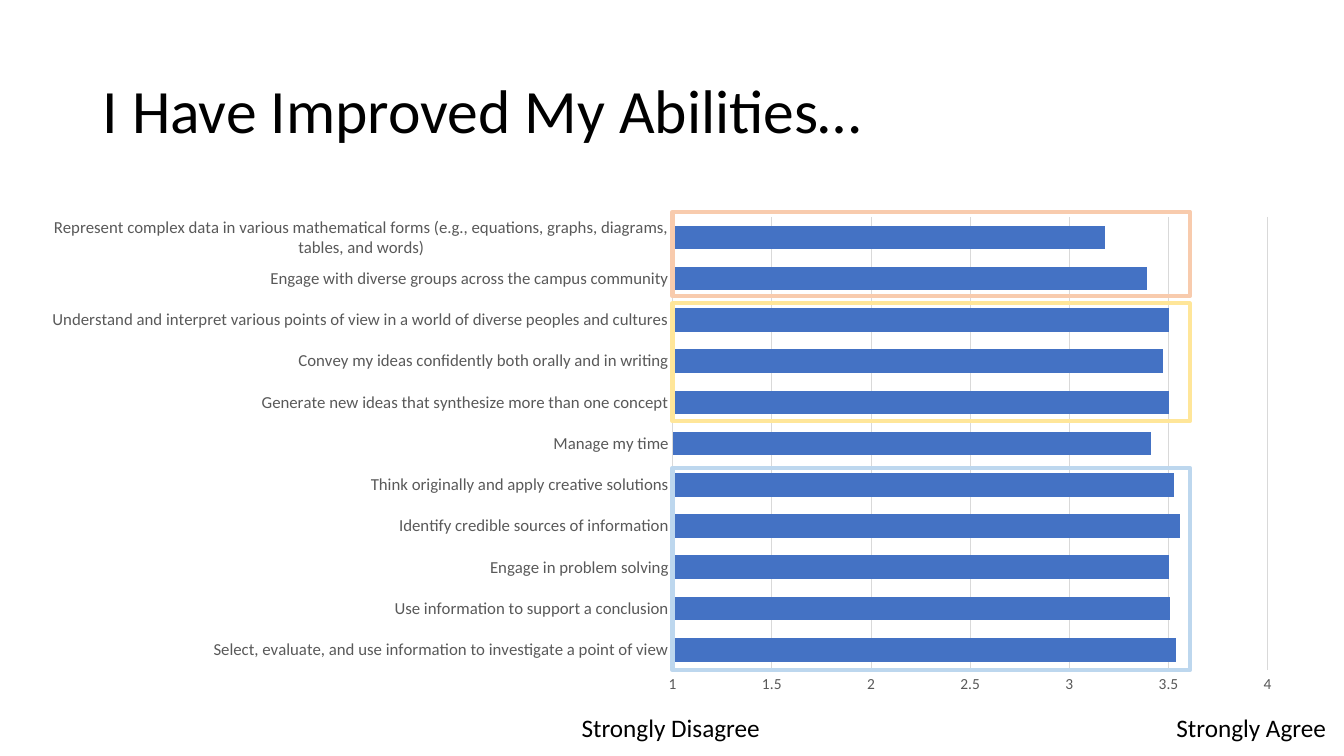
from dataclasses import dataclass

from lxml import etree
from pptx import Presentation
from pptx.chart.data import CategoryChartData
from pptx.dml.color import RGBColor
from pptx.enum.chart import XL_CHART_TYPE, XL_TICK_MARK
from pptx.enum.shapes import MSO_SHAPE
from pptx.enum.text import MSO_ANCHOR
from pptx.util import Inches, Pt

BAR_CLUSTERED = XL_CHART_TYPE.BAR_CLUSTERED
NO_TICK = XL_TICK_MARK.NONE
RECTANGLE = MSO_SHAPE.RECTANGLE
MIDDLE = MSO_ANCHOR.MIDDLE
CHART_NS = "http://schemas.openxmlformats.org/drawingml/2006/chart"

RATINGS = [
    ("Select, evaluate, and use information to investigate a point of view", 3.54),
    ("Use information to support a conclusion", 3.51),
    ("Engage in problem solving", 3.5),
    ("Identify credible sources of information", 3.56),
    ("Think originally and apply creative solutions", 3.53),
    ("Manage my time", 3.41),
    ("Generate new ideas that synthesize more than one concept", 3.5),
    ("Convey my ideas confidently both orally and in writing", 3.47),
    ("Understand and interpret various points of view in a world of diverse peoples and cultures", 3.5),
    ("Engage with diverse groups across the campus community", 3.39),
    ("Represent complex data in various mathematical forms "
     "(e.g., equations, graphs, diagrams, tables, and words)", 3.18),
]


@dataclass(frozen=True)
class Theme:
    font: str = "Calibri"
    text: str = "000000"
    muted: str = "595959"
    grid: str = "D9D9D9"
    bar: str = "4472C4"
    orange: str = "F8CBAD"
    yellow: str = "FFE699"
    blue: str = "BDD7EE"
    title_size: int = 44
    label_size: int = 18
    category_size: int = 12
    value_size: int = 11


class SlideBuilder:
    def __init__(self, page, theme):
        self.page = page
        self.theme = theme

    def style_font(self, font, size, color):
        font.name = self.theme.font
        font.size = Pt(size)
        font.color.rgb = RGBColor.from_string(color)

    def style_line(self, line, color, width):
        line.color.rgb = RGBColor.from_string(color)
        line.width = Pt(width)

    def add_text(self, text, left, top, width, height, size, wrap=False):
        box = self.page.shapes.add_textbox(
            Inches(left), Inches(top), Inches(width), Inches(height))
        frame = box.text_frame
        frame.word_wrap = wrap
        frame.text = text
        para = frame.paragraphs[0]
        self.style_font(para.runs[0].font, size, self.theme.text)
        return box

    def add_title(self, text, left, top, width, height):
        box = self.add_text(text, left, top, width, height, self.theme.title_size, wrap=True)
        box.text_frame.vertical_anchor = MIDDLE
        box.text_frame.paragraphs[0].line_spacing = 0.9

    def add_frame(self, left, top, width, height, color):
        box = self.page.shapes.add_shape(
            RECTANGLE, Inches(left), Inches(top), Inches(width), Inches(height))
        box.shadow.inherit = False
        box.fill.background()
        self.style_line(box.line, color, 3)

    def add_bar_chart(self, ratings, left, top, width, height, plot_area):
        data = CategoryChartData()
        data.categories = [label for label, _ in ratings]
        data.add_series("Series 1", [score for _, score in ratings])
        chart = self.page.shapes.add_chart(
            BAR_CLUSTERED, Inches(left), Inches(top), Inches(width), Inches(height), data).chart
        chart.has_legend = False
        chart.has_title = False
        self.style_font(chart.font, 10, self.theme.text)
        plot = chart.plots[0]
        plot.gap_width = 74
        plot.vary_by_categories = False
        fill = plot.series[0].format.fill
        fill.solid()
        fill.fore_color.rgb = RGBColor.from_string(self.theme.bar)
        self.style_axes(chart)
        self.place_plot(chart, plot_area)

    def style_axes(self, chart):
        theme = self.theme
        categories, values = chart.category_axis, chart.value_axis
        for axis, size in ((categories, theme.category_size), (values, theme.value_size)):
            axis.major_tick_mark = NO_TICK
            axis.minor_tick_mark = NO_TICK
            self.style_font(axis.tick_labels.font, size, theme.muted)
        self.style_line(categories.format.line, theme.grid, 0.75)
        values.format.line.fill.background()
        values.minimum_scale = 1
        values.maximum_scale = 4
        values.major_unit = 0.5
        values.has_major_gridlines = True
        self.style_line(values.major_gridlines.format.line, theme.grid, 0.75)

    def place_plot(self, chart, plot_area):
        area = chart.element.find(f".//{{{CHART_NS}}}plotArea")
        for previous in area.findall(f"{{{CHART_NS}}}layout"):
            area.remove(previous)
        layout = etree.Element(f"{{{CHART_NS}}}layout")
        manual = etree.SubElement(layout, f"{{{CHART_NS}}}manualLayout")
        settings = [("layoutTarget", "inner"), ("xMode", "edge"), ("yMode", "edge")]
        settings += zip("xywh", plot_area)
        for name, value in settings:
            etree.SubElement(manual, f"{{{CHART_NS}}}{name}").set("val", str(value))
        area.insert(0, layout)


def main():
    deck = Presentation()
    deck.slide_width = Inches(13.33)
    deck.slide_height = Inches(7.5)
    theme = Theme()
    builder = SlideBuilder(deck.slides.add_slide(deck.slide_layouts[6]), theme)

    builder.add_bar_chart(RATINGS, 0.52, 2, 12.25, 5.03, (0.502, 0.03, 0.482, 0.895))
    builder.add_title("I Have Improved My Abilities…", 0.92, 0.4, 11.5, 1.45)
    for top, height, color in (
        (2.1, 0.84, theme.orange),
        (3.01, 1.17, theme.yellow),
        (4.64, 2.01, theme.blue),
    ):
        builder.add_frame(6.67, top, 5.13, height, color)
    for text, left, width in (("Strongly Disagree", 5.67, 1.99), ("Strongly Agree", 11.57, 1.7)):
        builder.add_text(text, left, 7.02, width, 0.4, theme.label_size)

    deck.save("out.pptx")


if __name__ == "__main__":
    main()
